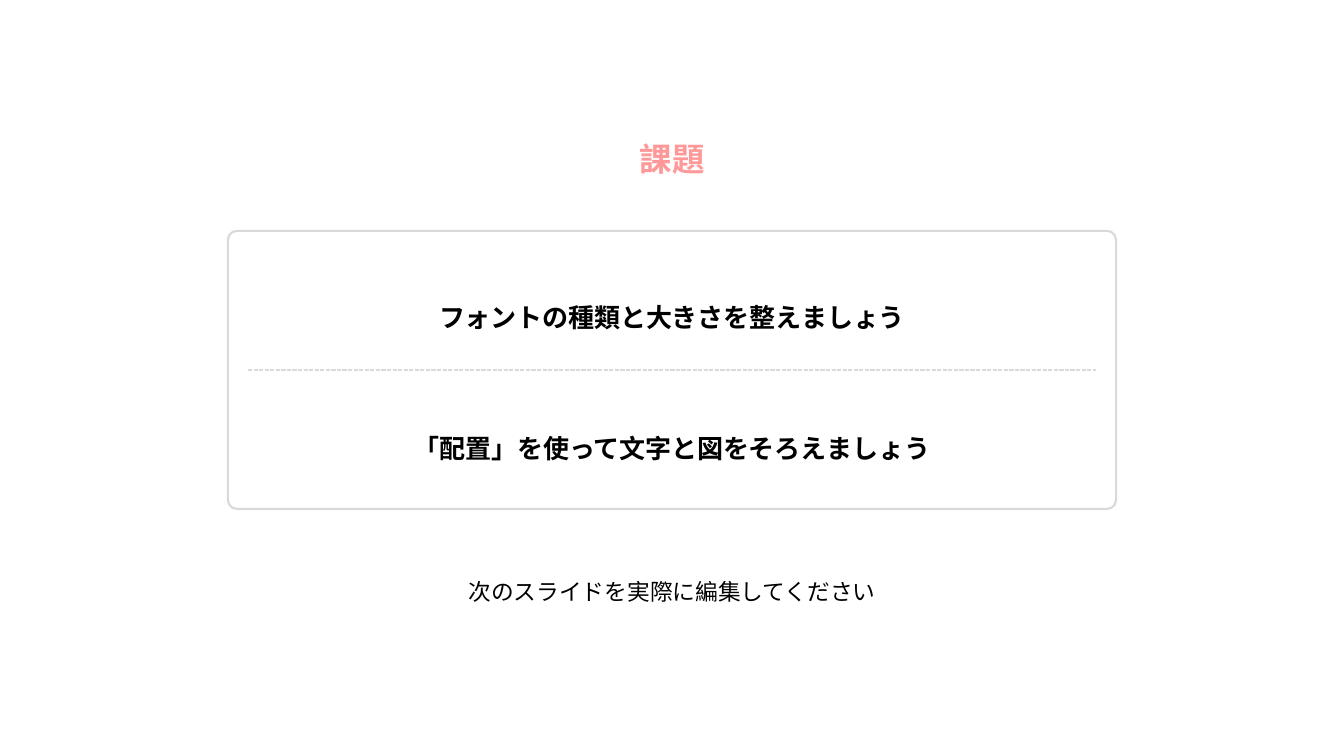
from lxml import etree
from pptx import Presentation
from pptx import util as u
from pptx.dml.color import RGBColor
from pptx.enum import dml, shapes, text
from pptx.oxml.ns import qn

WHITE = RGBColor(0xFF, 0xFF, 0xFF)
BLACK = RGBColor(0x00, 0x00, 0x00)
GREY = RGBColor(0xD9, 0xD9, 0xD9)
PINK = RGBColor(0xFF, 0x99, 0x99)
FONT = "Noto Sans CJK JP"
RAISED = "30000"  # superscript offset, thousandths of a percent

# Content: wording, top, width, height (inches), size, colour, bold
LINES = [
    ("課題", 1.26, 0.95, 0.77, 40, PINK, True),
    ("フォントの種類と大きさを整えましょう", 2.89, 5.6, 0.46, 32, BLACK, True),
    ("「配置」を使って文字と図をそろえましょう", 4.19, 6.2, 0.64, 32, BLACK, True),
    ("次のスライドを実際に編集してください", 5.64, 4.9, 0.57, 28, BLACK, False),
]
SLIDE_W, SLIDE_H = 13.33, 7.5
CARD_W, CARD_H = 8.81, 2.76
CARD_TOP = 2.29
CARD_PADDING = 0.2


def centred(width):
    return u.Inches((SLIDE_W - width) / 2)


def add_line_of_text(slide, wording, top, width, height, size, colour, bold):
    box = slide.shapes.add_textbox(centred(width), u.Inches(top),
                                   u.Inches(width), u.Inches(height))
    frame = box.text_frame
    frame.text = wording
    frame.word_wrap = False
    frame.auto_size = text.MSO_AUTO_SIZE.SHAPE_TO_FIT_TEXT
    paragraph = frame.paragraphs[0]
    paragraph.alignment = text.PP_ALIGN.CENTER
    font = paragraph.runs[0].font
    font.size, font.bold, font.name = u.Pt(size), bold, FONT
    font.color.rgb = colour
    properties = paragraph.runs[0]._r.get_or_add_rPr()
    properties.set("baseline", RAISED)
    etree.SubElement(properties, qn("a:ea"), typeface=FONT)


def main():
    prs = Presentation()
    prs.slide_width, prs.slide_height = u.Inches(SLIDE_W), u.Inches(SLIDE_H)
    slide = prs.slides.add_slide(prs.slide_layouts[6])
    slide.background.fill.solid()
    slide.background.fill.fore_color.rgb = WHITE

    # Card holding the two tasks
    card = slide.shapes.add_shape(
        shapes.MSO_SHAPE.ROUNDED_RECTANGLE, centred(CARD_W), u.Inches(CARD_TOP),
        u.Inches(CARD_W), u.Inches(CARD_H))
    card.adjustments[0] = 0.033
    card.shadow.inherit = False
    card.fill.solid()
    card.fill.fore_color.rgb = WHITE
    card.line.color.rgb = GREY
    card.line.width = u.Pt(1.5)

    # Dashed divider across the middle of the card
    middle = u.Inches(CARD_TOP + CARD_H / 2)
    padding = u.Inches(CARD_PADDING)
    divider = slide.shapes.add_connector(
        shapes.MSO_CONNECTOR.STRAIGHT, card.left + padding, middle,
        card.left + card.width - padding, middle)
    divider.line.color.rgb = GREY
    divider.line.width = u.Pt(1)
    divider.line.dash_style = dml.MSO_LINE.SQUARE_DOT
    etree.SubElement(divider._element.spPr, qn("a:effectLst"))

    # Heading, tasks and closing instruction
    for line in LINES:
        add_line_of_text(slide, *line)

    prs.save("out.pptx")


if __name__ == "__main__":
    main()
